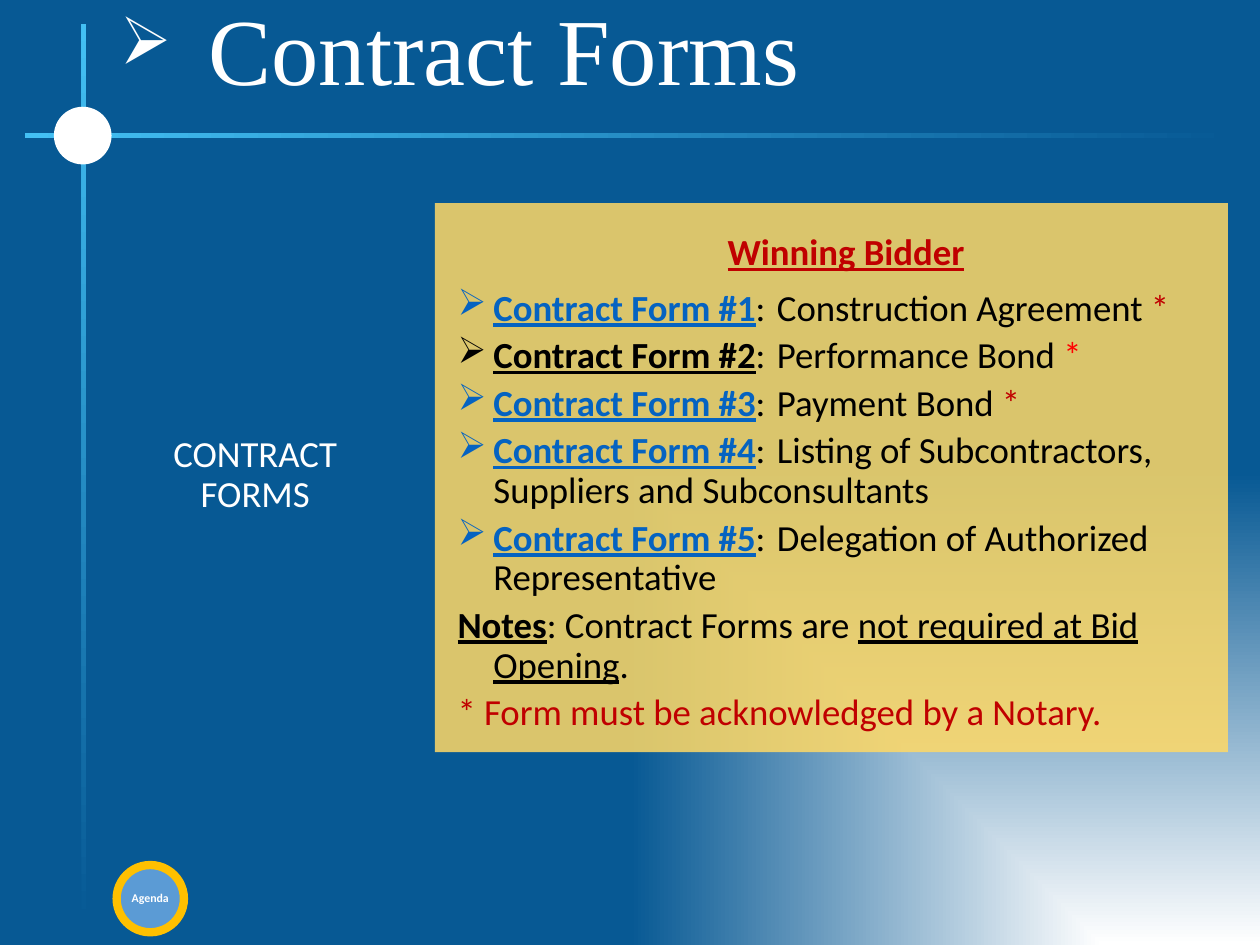
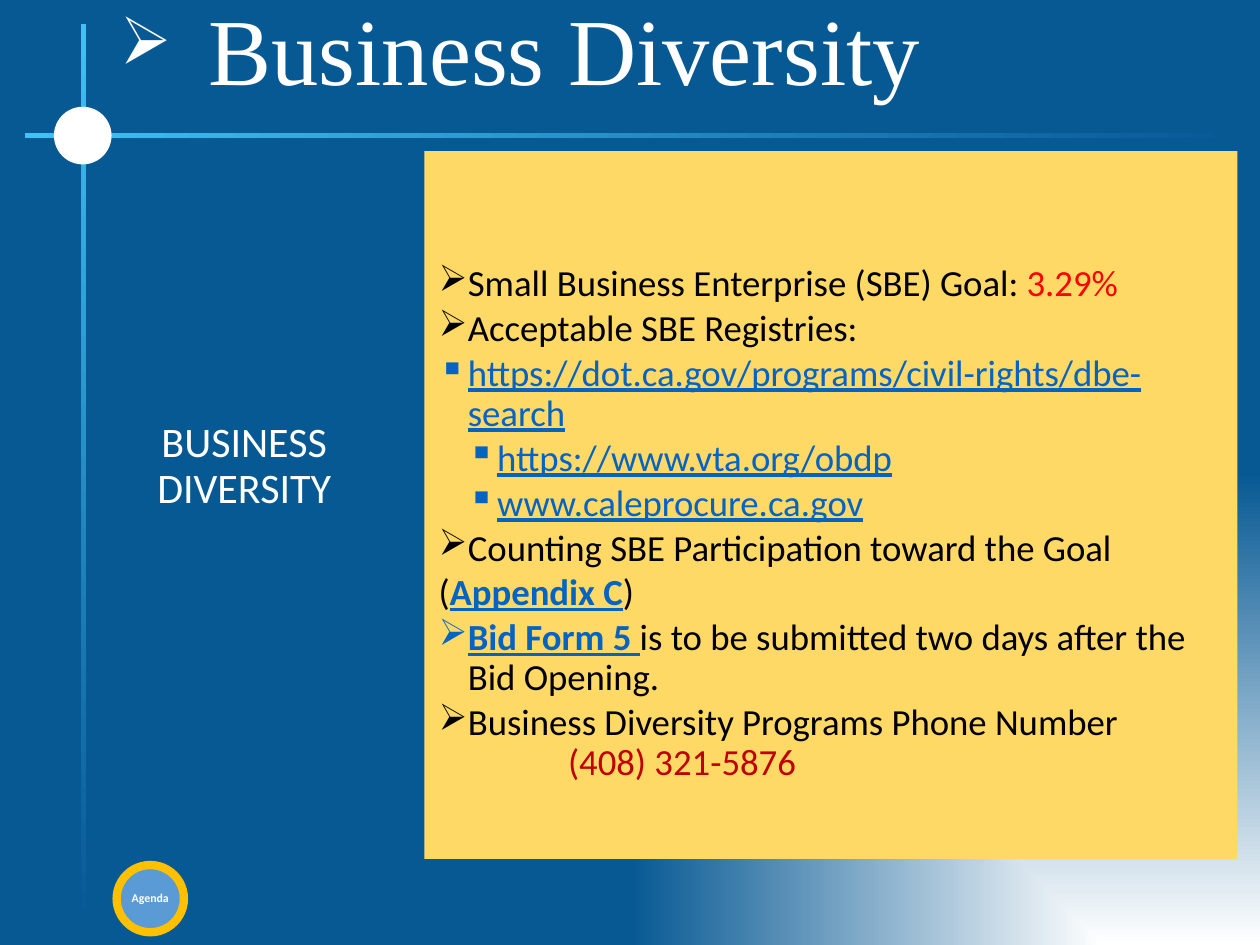
from lxml import etree
from pptx import Presentation
from pptx import util as u
from pptx.dml.color import RGBColor
from pptx.enum import shapes, text
from pptx.oxml import parse_xml
from pptx.oxml.ns import nsdecls, qn

PX = 9144  # 100 px to the inch

NAVY = RGBColor(0x07, 0x59, 0x94)
SKY = RGBColor(0x43, 0xC0, 0xF4)
WHITE = RGBColor(0xFF, 0xFF, 0xFF)
BLACK = RGBColor(0, 0, 0)
YELLOW = RGBColor(0xFF, 0xD9, 0x66)
GOLD = RGBColor(0xFF, 0xC0, 0x00)
BUTTON_BLUE = RGBColor(0x5B, 0x9B, 0xD5)
LINK_BLUE = RGBColor(0x05, 0x63, 0xC1)
DARK_RED = RGBColor(0xC0, 0x00, 0x00)
RED = RGBColor(0xFF, 0x00, 0x00)

ARROW, SQUARE = "➢", "▪"
SHAPE = shapes.MSO_SHAPE
LEFT, CENTER = text.PP_ALIGN.LEFT, text.PP_ALIGN.CENTER

# Paragraphs: (runs, left margin, first-line indent, bullet, space after, alignment)
# Runs: (text, colour, style), where style holds "b" for bold and "u" for underline
contract_lines = [([("Winning Bidder", DARK_RED, "bu")], 31, 0, None, 12, CENTER)]
contract_forms = [
    ("Construction Agreement ", LINK_BLUE, DARK_RED),
    ("Performance Bond ", BLACK, RED),
    ("Payment Bond ", LINK_BLUE, DARK_RED),
    ("Listing of Subcontractors, Suppliers and Subconsultants", LINK_BLUE, None),
    ("Delegation of Authorized Representative", LINK_BLUE, None),
]
for number, (form_name, form_color, star_color) in enumerate(contract_forms, 1):
    runs = [(f"Contract Form #{number}", form_color, "bu"), (f":\t{form_name}", BLACK, "")]
    if star_color:
        runs.append(("*", star_color, ""))
    contract_lines.append((runs, 50, -38, ARROW, 6, LEFT))
contract_lines += [
    ([("Notes", BLACK, "bu"), (": Contract Forms are ", BLACK, ""),
      ("not required at Bid Opening", BLACK, "u"), (".", BLACK, "")], 50, -38, None, 6, LEFT),
    ([("* Form must be acknowledged by a Notary.", DARK_RED, "")], 50, -38, None, 6, LEFT),
]

diversity_lines = [
    ([("Small Business Enterprise (SBE) Goal: ", BLACK, ""), ("3.29%", RED, "")],
     31, -31, ARROW, 4, LEFT),
    ([("Acceptable SBE Registries:", BLACK, "")], 31, -31, ARROW, 4, LEFT),
    ([("https://dot.ca.gov/programs/civil-rights/dbe-search", LINK_BLUE, "u")],
     31, -31, SQUARE, 4, LEFT),
    ([("https://www.vta.org/obdp", LINK_BLUE, "u")], 62, -31, SQUARE, 4, LEFT),
    ([("www.caleprocure.ca.gov", LINK_BLUE, "u")], 62, -31, SQUARE, 4, LEFT),
    ([("Counting SBE Participation toward the Goal", BLACK, "")], 31, -31, ARROW, 4, LEFT),
    ([("(", BLACK, ""), ("Appendix C", LINK_BLUE, "bu"), (")", BLACK, "")],
     31, -31, None, 4, LEFT),
    ([("Bid Form 5 ", LINK_BLUE, "bu"),
      ("is to be submitted two days after the Bid Opening.", BLACK, "")],
     31, -31, ARROW, 4, LEFT),
    ([("Business Diversity Programs Phone Number", BLACK, "")], 31, -31, ARROW, 0, LEFT),
    ([("(408) 321-5876", DARK_RED, "")], 137, 0, None, 4, LEFT),
]

# Boxes are left, top, width, height; insets are left, top, right, bottom
slide_data = [
    dict(title="Contract Forms", label="CONTRACT FORMS", label_box=(160, 433, 225, 141),
         label_insets=(15, 15, 20, 15), label_size=28, panel_box=(460, 215, 839, 581),
         panel_insets=(12, 25, 12, 12), panel_opacity=85, lines=contract_lines),
    dict(title="Business Diversity", label="BUSINESS DIVERSITY", label_box=(125, 436, 267, 116),
         label_insets=(25, 9, 25, 9), label_size=32, panel_box=(449, 160, 860, 749),
         panel_insets=(15, 55, 20, 15), panel_opacity=100, lines=diversity_lines),
]


def add_filled_shape(slide, kind, box, color):
    shape = slide.shapes.add_shape(kind, *[side * PX for side in box])
    shape.shadow.inherit = False
    shape.line.fill.background()
    shape.fill.solid()
    shape.fill.fore_color.rgb = color
    return shape


def write_lines(shape, lines, size, insets, font_name="Calibri", bullet_size=100):
    """Fill a shape with formatted paragraphs, centred vertically."""
    frame = shape.text_frame
    frame.word_wrap = True
    frame.vertical_anchor = text.MSO_ANCHOR.MIDDLE
    frame.margin_left, frame.margin_top, frame.margin_right, frame.margin_bottom = [
        inset * PX for inset in insets]
    for index, (runs, margin, indent, bullet, space_after, alignment) in enumerate(lines):
        paragraph = frame.add_paragraph() if index else frame.paragraphs[0]
        properties = paragraph._p.get_or_add_pPr()
        properties.set("marL", str(margin * PX))
        properties.set("indent", str(indent * PX))
        if bullet:
            etree.SubElement(properties, qn("a:buSzPct"), val=str(bullet_size * 1000))
            etree.SubElement(properties, qn("a:buChar"), char=bullet)
        else:
            etree.SubElement(properties, qn("a:buNone"))
        if any("\t" in run_text for run_text, _, _ in runs):
            tabs = etree.SubElement(properties, qn("a:tabLst"))
            etree.SubElement(tabs, qn("a:tab"), pos=str(350 * PX), algn="l")
        paragraph.alignment = alignment
        paragraph.line_spacing = 0.9
        paragraph.space_after = u.Pt(space_after)
        for run_text, color, style in runs:
            run = paragraph.add_run()
            run.text = run_text
            run.font.name = font_name
            run.font.size = u.Pt(size)
            run.font.color.rgb = color
            run.font.bold = "b" in style
            run.font.underline = "u" in style


presentation = Presentation()
presentation.slide_width = 1333 * PX
presentation.slide_height = 1000 * PX

for data in slide_data:
    slide = presentation.slides.add_slide(presentation.slide_layouts[6])

    # Background fading from white in the bottom right corner
    background = slide.background.fill
    background.gradient()
    for stop, color in zip(background.gradient_stops, (WHITE, NAVY)):
        stop.color.rgb = color
    gradient = slide._element.find(".//" + qn("a:gradFill"))
    gradient.remove(gradient.find(qn("a:lin")))
    gradient.append(parse_xml(
        f'<a:path {nsdecls("a")} path="rect"><a:fillToRect l="100000" t="100000"/></a:path>'))
    gradient.append(parse_xml(f'<a:tileRect {nsdecls("a")} r="-100000" b="-100000"/>'))

    # Title
    title = slide.shapes.add_textbox(117 * PX, 8 * PX, 1200 * PX, 100 * PX)
    write_lines(title, [([(data["title"], WHITE, "")], 94, -94, ARROW, 0, LEFT)],
                72, (10, 5, 10, 5), "Times New Roman", 70)

    # Side label and panel
    label = slide.shapes.add_textbox(*[side * PX for side in data["label_box"]])
    write_lines(label, [([(data["label"], WHITE, "")], 0, 0, None, 0, CENTER)],
                data["label_size"], data["label_insets"])
    panel = add_filled_shape(slide, SHAPE.RECTANGLE, data["panel_box"], YELLOW)
    if data["panel_opacity"] < 100:
        panel_color = panel._element.spPr.find(".//" + qn("a:srgbClr"))
        etree.SubElement(panel_color, qn("a:alpha"), val=str(data["panel_opacity"] * 1000))
    write_lines(panel, data["lines"], 28, data["panel_insets"])

    # Glowing frames around the two bars of the cross
    for left, top, right, bottom in ((17, 133, 1317, 153), (78, 17, 98, 987)):
        builder = slide.shapes.build_freeform(left, top, scale=PX)
        builder.add_line_segments([(right, top), (right, bottom), (left, bottom)])
        builder.move_to(left + 5, top + 5)
        builder.add_line_segments(
            [(left + 5, bottom - 5), (right - 5, bottom - 5), (right - 5, top + 5)])
        frame = builder.convert_to_shape()
        frame.line.fill.background()
        frame.fill.solid()
        frame.fill.fore_color.rgb = SKY
        frame._element.spPr.append(parse_xml(
            f'<a:effectLst {nsdecls("a")}><a:glow rad="{u.Pt(8)}"><a:srgbClr val="{WHITE}"/>'
            f'</a:glow><a:softEdge rad="{u.Pt(5)}"/></a:effectLst>'))

    # Ring, bars and hub of the cross
    ring = add_filled_shape(slide, SHAPE.DONUT, (52, 108, 70, 70), NAVY)
    ring.adjustments[0] = 0.07
    for box, angle in (((26, 141, 1283, 5), 180), ((86, 25, 5, 955), 90)):
        bar = add_filled_shape(slide, SHAPE.RECTANGLE, box, NAVY)
        bar.fill.gradient()
        bar.fill.gradient_angle = angle
        for stop, color in zip(bar.fill.gradient_stops, (NAVY, SKY)):
            stop.color.rgb = color
    add_filled_shape(slide, SHAPE.OVAL, (57, 113, 61, 61), WHITE)

    # Agenda button
    button = add_filled_shape(slide, SHAPE.OVAL, (124, 916, 70, 70), BUTTON_BLUE)
    write_lines(button, [([("Agenda", WHITE, "b")], 0, 0, None, 0, CENTER)], 9, (0, 0, 0, 0))
    button_ring = add_filled_shape(slide, SHAPE.DONUT, (119, 911, 80, 80), GOLD)
    button_ring.adjustments[0] = 0.11

presentation.save("out.pptx")
